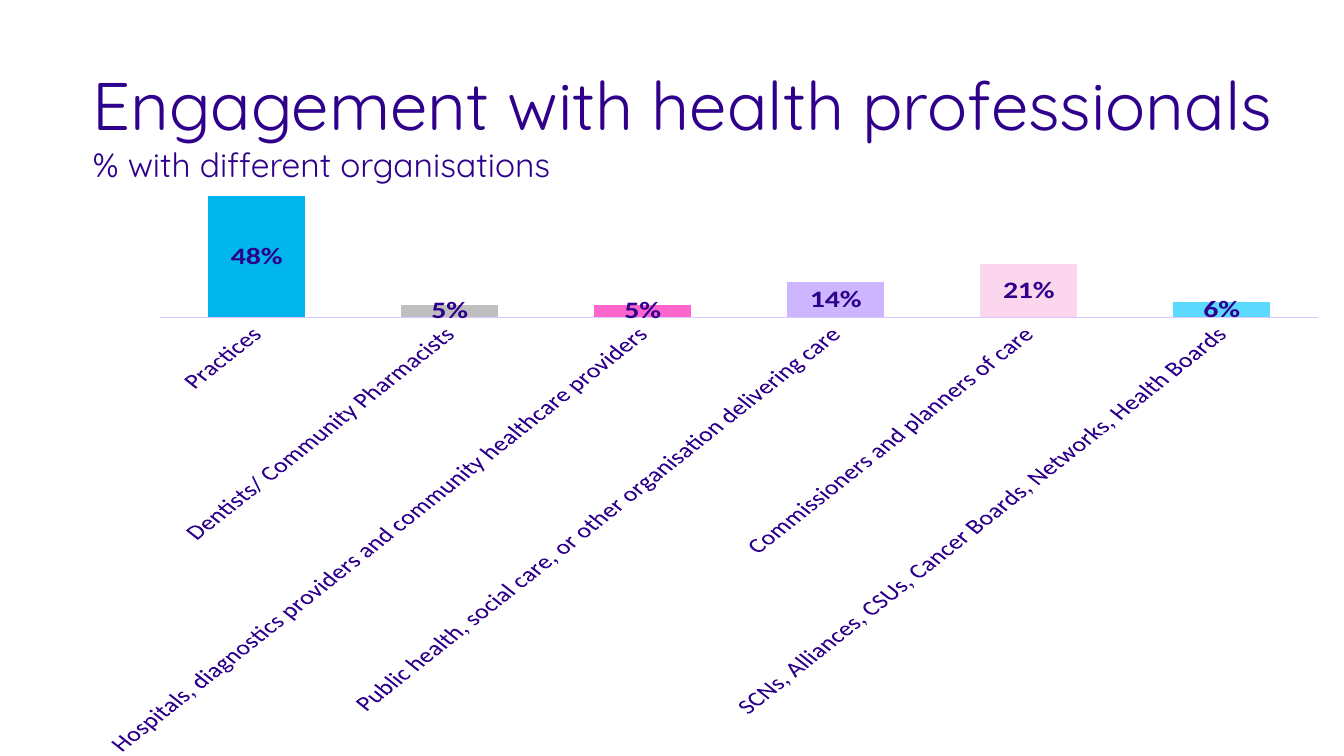
from pptx import Presentation
from pptx.chart.data import CategoryChartData
from pptx.dml.color import RGBColor
from pptx.enum.chart import XL_CHART_TYPE, XL_LABEL_POSITION, XL_TICK_MARK
from pptx.enum.text import MSO_ANCHOR
from pptx.util import Inches, Pt

COLORS = {
    "background": "FFFFFF", "text": "2E008B", "axis": "DAC7FF",
    "blue": "00B6ED", "grey": "BFBFBF", "pink": "FF66CC",
    "lilac": "CDB5FF", "blush": "FCD6ED", "sky": "5BD9FF",
}
# The second part wraps onto its own line
HEADING = [("Engagement with health professionals ", 36),
           ("% with different organisations", 18)]
ENGAGEMENT = [
    ("Practices", 0.48, "blue"),
    ("Dentists/ Community Pharmacists", 0.05, "grey"),
    ("Hospitals, diagnostics providers and community healthcare providers", 0.05, "pink"),
    ("Public health, social care, or other organisation delivering care", 0.14, "lilac"),
    ("Commissioners and planners of care", 0.21, "blush"),
    ("SCNs, Alliances, CSUs, Cancer Boards, Networks, Health Boards", 0.06, "sky"),
]
LABEL_ANGLE = -45


def color(name):
    return RGBColor.from_string(COLORS[name])


def format_font(font, size, name="Calibri", bold=False):
    font.size = Pt(size)
    font.name = name
    font.bold = bold
    font.color.rgb = color("text")


def add_text(slide, parts, left, top, width, height, font="Quicksand"):
    shape = slide.shapes.add_textbox(Inches(left), Inches(top), Inches(width), Inches(height))
    frame = shape.text_frame
    frame.word_wrap = True
    frame.vertical_anchor = MSO_ANCHOR.TOP
    paragraph = frame.paragraphs[0]
    for text, size in parts:
        run = paragraph.add_run()
        run.text = text
        format_font(run.font, size, font)
    return shape


presentation = Presentation()
presentation.slide_width = Inches(10)
presentation.slide_height = Inches(5.625)
slide = presentation.slides.add_slide(presentation.slide_layouts[6])
slide.background.fill.solid()
slide.background.fill.fore_color.rgb = color("background")

# Heading
add_text(slide, HEADING, 0.59, 0.42, 9.09, 0.74)

# Chart
chart_data = CategoryChartData(number_format="0%")
chart_data.categories = [name for name, _, _ in ENGAGEMENT]
chart_data.add_series("Series 1", [value for _, value, _ in ENGAGEMENT])
chart = slide.shapes.add_chart(
    XL_CHART_TYPE.COLUMN_CLUSTERED, Inches(0.38), Inches(1.16), Inches(9.62), Inches(4.47), chart_data
).chart
chart.has_legend = False
chart.has_title = False
format_font(chart.font, 16)

# Axes
category_axis = chart.category_axis
category_axis.major_tick_mark = XL_TICK_MARK.NONE
category_axis.format.line.color.rgb = color("axis")
category_axis.format.line.width = Pt(0.75)
format_font(category_axis.tick_labels.font, 14)
label_body = category_axis._element.find("c:txPr/a:bodyPr", category_axis._element.nsmap)
label_body.set("rot", str(LABEL_ANGLE * 60000))
label_body.set("vert", "horz")
value_axis = chart.value_axis
value_axis.has_major_gridlines = False
value_axis.visible = False

# Columns and their labels
plot = chart.plots[0]
plot.gap_width = 100
plot.overlap = -27
plot.vary_by_categories = False
series = plot.series[0]
series.format.fill.solid()
series.format.fill.fore_color.rgb = color("blue")
for index, (_, _, fill) in enumerate(ENGAGEMENT[1:], start=1):
    point_fill = series.points[index].format.fill
    point_fill.solid()
    point_fill.fore_color.rgb = color(fill)
labels = series.data_labels
labels.show_value = True
labels.number_format = "0%"
labels.number_format_is_linked = False
labels.position = XL_LABEL_POSITION.CENTER
format_font(labels.font, 16, bold=True)

presentation.save("out.pptx")
